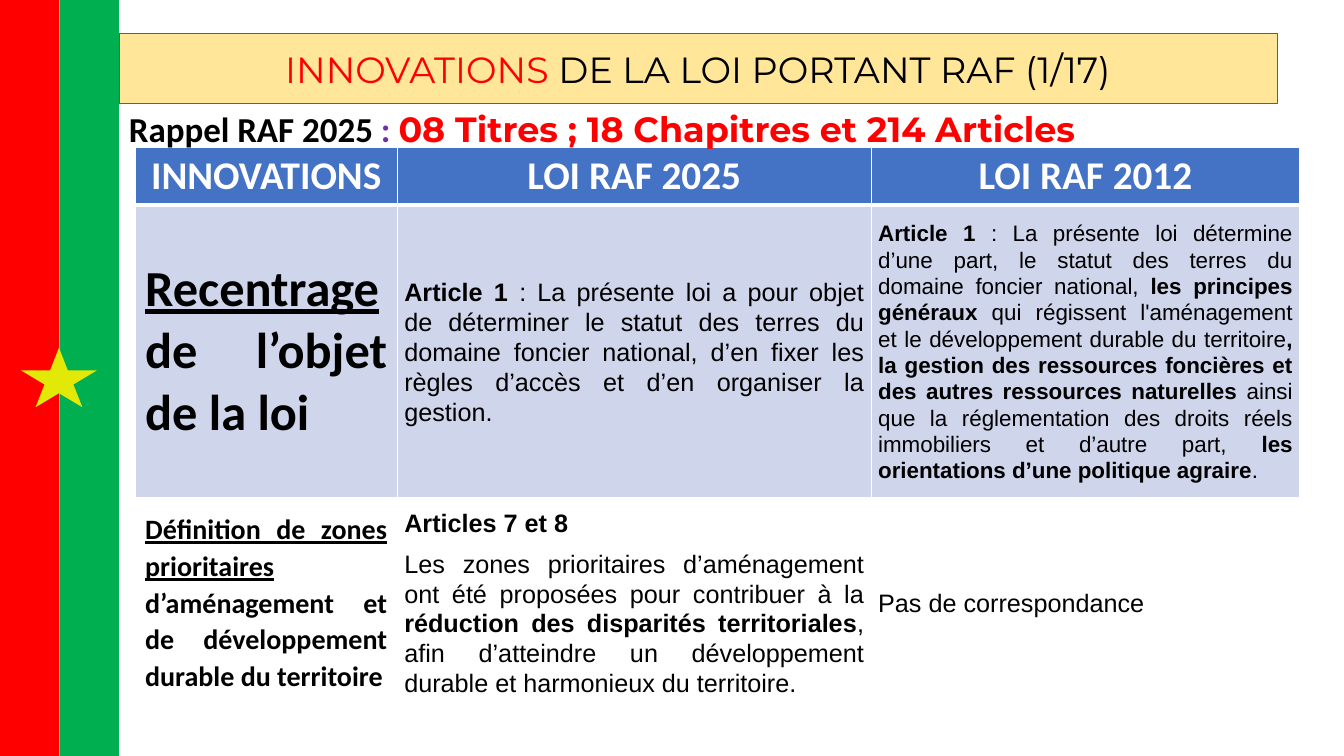
from dataclasses import dataclass

from lxml import etree
from pptx import Presentation
from pptx import util as u
from pptx.dml.color import RGBColor
from pptx.enum import shapes, text
from pptx.oxml.ns import qn

PX = 9144  # 100 px to the inch

RED = RGBColor(0xFF, 0x00, 0x00)
GREEN = RGBColor(0x00, 0xB0, 0x50)
YELLOW = RGBColor(0xE2, 0xE9, 0x07)
CREAM = RGBColor(0xFF, 0xE6, 0x99)
BROWN = RGBColor(0x80, 0x60, 0x00)
PURPLE = RGBColor(0x70, 0x30, 0xA0)
BLUE = RGBColor(0x44, 0x72, 0xC4)
PALE_BLUE = RGBColor(0xCF, 0xD5, 0xEA)
WHITE = RGBColor(0xFF, 0xFF, 0xFF)
BLACK = RGBColor(0x00, 0x00, 0x00)

CENTER, JUSTIFY = text.PP_ALIGN.CENTER, text.PP_ALIGN.JUSTIFY


@dataclass(frozen=True)
class Span:
    words: str
    bold: bool = False
    underline: bool = False
    color: RGBColor = BLACK
    font: str = ""


@dataclass(frozen=True)
class Entry:
    """A table cell: each paragraph is a list of spans."""
    paragraphs: list[list[Span]]
    size: int
    font: str = "Arial"
    align: text.PP_ALIGN = JUSTIFY
    line_spacing: float = 1.06
    space_after: int = 8


@dataclass(frozen=True)
class FlagPart:
    preset: shapes.MSO_SHAPE
    left: int
    top: int
    width: int
    height: int
    color: RGBColor


def heading(words: str) -> Entry:
    return Entry([[Span(words, bold=True, color=WHITE)]], 28, "Calibri", CENTER, 1, 0)


FLAG = [
    FlagPart(shapes.MSO_SHAPE.RECTANGLE, 0, 0, 59, 750, RED),
    FlagPart(shapes.MSO_SHAPE.RECTANGLE, 59, 0, 59, 750, GREEN),
    FlagPart(shapes.MSO_SHAPE.STAR_5_POINT, 21, 345, 75, 59, YELLOW),
]
TITLE = [Span("INNOVATIONS", color=RED), Span(" DE LA LOI PORTANT RAF (1/17)")]
REMINDER = [
    Span("Rappel RAF 2025 ", bold=True),
    Span(": ", bold=True, color=PURPLE),
    Span("08 Titres ; 18 Chapitres et 214 Articles", bold=True, color=RED, font="Montserrat"),
]
COLUMNS = [260, 470, 425]
ROWS = [53, 290, 208]
ROW_FILLS = [BLUE, PALE_BLUE, None]
COMPARISON = [
    [heading("INNOVATIONS"), heading("LOI RAF 2025"), heading("LOI RAF 2012")],
    [
        Entry([[Span("Recentrage", True, True), Span(" de l’objet de la loi", True)]],
              36, "Calibri", line_spacing=1, space_after=0),
        Entry([[
            Span("Article 1 ", True),
            Span(": La présente loi a pour objet de déterminer le statut des terres du domaine "
                 "foncier national, d’en fixer les règles d’accès et d’en organiser la gestion."),
        ]], 18),
        Entry([[
            Span("Article 1 ", True),
            Span(": La présente loi détermine d’une part, le statut des terres du domaine "
                 "foncier national, "),
            Span("les principes généraux ", True),
            Span("qui régissent l'aménagement et le développement durable du territoire"),
            Span(", la gestion des ressources foncières et des autres ressources naturelles", True),
            Span(" ainsi que la réglementation des droits réels immobiliers et d’autre part, "),
            Span("les orientations d’une politique agraire", True),
            Span("."),
        ]], 16),
    ],
    [
        Entry([[
            Span("Définition de zones prioritaires ", True, True),
            Span("d’aménagement et de développement durable du territoire", True),
        ]], 20, "Calibri", line_spacing=1.07),
        Entry([
            [Span("Articles 7 et 8", True)],
            [
                Span("Les zones prioritaires d’aménagement ont été proposées pour contribuer à la "),
                Span("réduction des disparités territoriales", True),
                Span(", afin d’atteindre un développement durable et harmonieux du territoire."),
            ],
        ], 18),
        Entry([[Span("Pas de correspondance")]], 18),
    ],
]


def write(paragraph, spans: list[Span], size: int, font: str) -> None:
    for span in spans:
        run = paragraph.add_run()
        run.text = span.words
        run.font.name = span.font or font
        run.font.size = u.Pt(size)
        run.font.bold = span.bold
        run.font.underline = span.underline
        run.font.color.rgb = span.color


def add_borders(cell, top: int, bottom: int) -> None:
    properties = cell._tc.get_or_add_tcPr()
    for side, points in (("L", 1), ("R", 1), ("T", top), ("B", bottom)):
        border = etree.SubElement(properties, qn(f"a:ln{side}"), w=str(u.Pt(points)))
        fill = etree.SubElement(border, qn("a:solidFill"))
        etree.SubElement(fill, qn("a:srgbClr"), val=str(WHITE))


def fill_cell(cell, entry: Entry, color: RGBColor | None) -> None:
    cell.vertical_anchor = text.MSO_ANCHOR.MIDDLE
    if color is None:
        cell.fill.background()
    else:
        cell.fill.solid()
        cell.fill.fore_color.rgb = color
    if entry.font == "Arial":
        cell.margin_left = cell.margin_right = 7 * PX
        cell.margin_top, cell.margin_bottom = PX, 0
    frame = cell.text_frame
    for index, spans in enumerate(entry.paragraphs):
        paragraph = frame.add_paragraph() if index else frame.paragraphs[0]
        paragraph.alignment = entry.align
        paragraph.line_spacing = entry.line_spacing
        paragraph.space_after = u.Pt(entry.space_after)
        write(paragraph, spans, entry.size, entry.font)


def add_title(slide) -> None:
    title = slide.shapes.title
    title.left, title.top, title.width, title.height = (n * PX for n in (118, 33, 1149, 70))
    title.fill.solid()
    title.fill.fore_color.rgb = CREAM
    title.line.color.rgb = BROWN
    title.line.width = u.Pt(1)
    frame = title.text_frame
    frame.auto_size = text.MSO_AUTO_SIZE.NONE
    frame.vertical_anchor = text.MSO_ANCHOR.MIDDLE
    frame.paragraphs[0].alignment = CENTER
    write(frame.paragraphs[0], TITLE, 26, "Montserrat")


def add_flag(slide) -> None:
    flag = slide.shapes.add_group_shape()
    for part in FLAG:
        shape = flag.shapes.add_shape(part.preset, part.left * PX, part.top * PX,
                                      part.width * PX, part.height * PX)
        shape.shadow.inherit = False
        shape.fill.solid()
        shape.fill.fore_color.rgb = part.color
        shape.line.fill.background()


def add_comparison(slide) -> None:
    table = slide.shapes.add_table(len(ROWS), len(COLUMNS), 134 * PX, 146 * PX,
                                   sum(COLUMNS) * PX, sum(ROWS) * PX).table
    for column, width in zip(table.columns, COLUMNS):
        column.width = width * PX
    for index, (row, height) in enumerate(zip(table.rows, ROWS)):
        row.height = height * PX
        for cell, entry in zip(row.cells, COMPARISON[index]):
            add_borders(cell, top=3 if index == 1 else 1, bottom=3 if index == 0 else 1)
            fill_cell(cell, entry, ROW_FILLS[index])


def add_reminder(slide) -> None:
    frame = slide.shapes.add_textbox(118 * PX, 102 * PX, 1208 * PX, 52 * PX).text_frame
    frame.word_wrap = True
    write(frame.paragraphs[0], REMINDER, 25, "Calibri")


def main() -> None:
    deck = Presentation()
    deck.slide_width, deck.slide_height = 1333 * PX, 750 * PX
    slide = deck.slides.add_slide(deck.slide_layouts.get_by_name("Title Only"))
    add_title(slide)
    add_flag(slide)
    add_comparison(slide)
    add_reminder(slide)
    deck.save("out.pptx")


if __name__ == "__main__":
    main()
